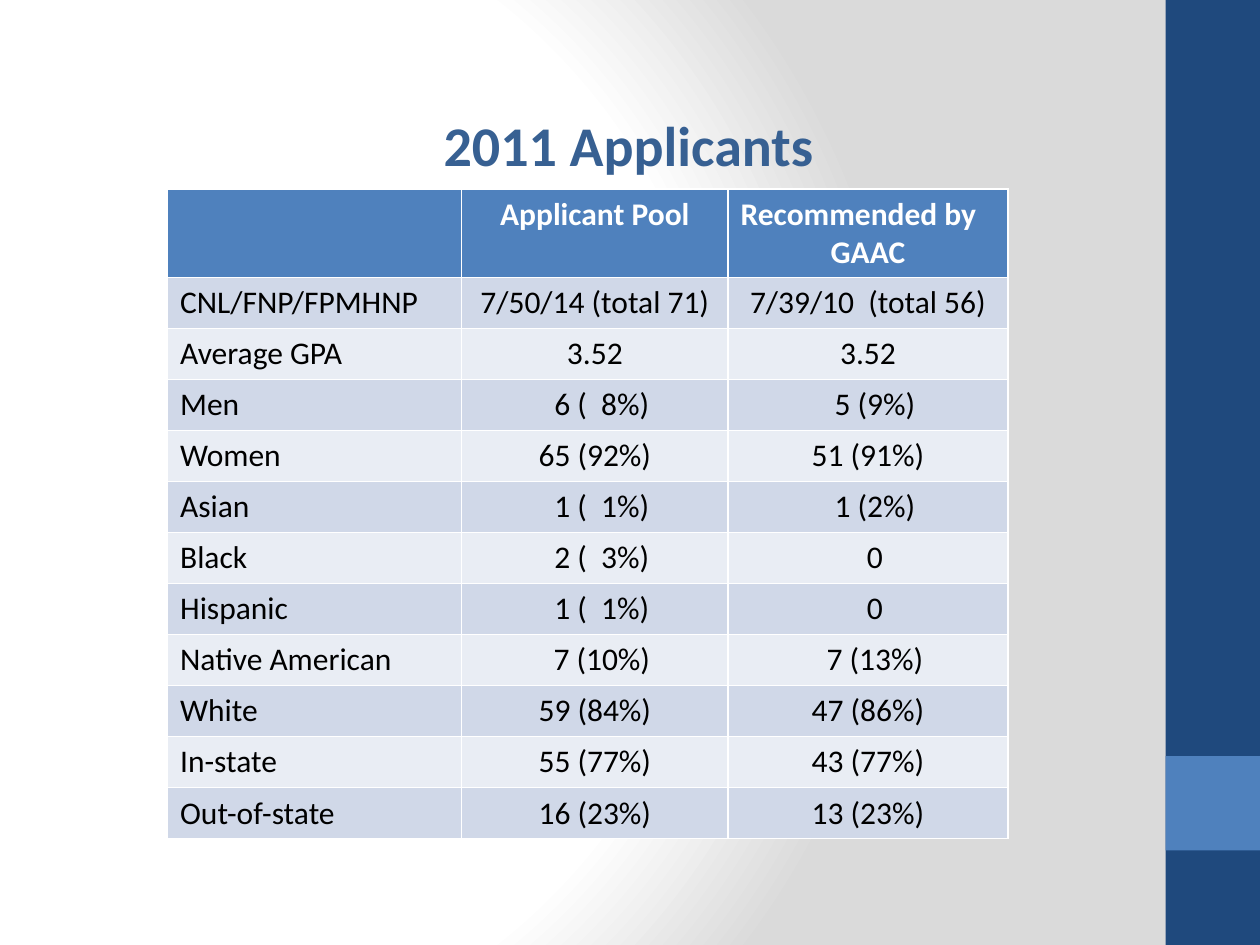
from dataclasses import dataclass

from pptx import Presentation
from pptx.dml.color import RGBColor
from pptx.enum.text import MSO_ANCHOR, MSO_AUTO_SIZE, PP_ALIGN
from pptx.oxml import parse_xml
from pptx.oxml.ns import nsdecls, qn
from pptx.util import Inches, Pt

LEFT, CENTER = PP_ALIGN.LEFT, PP_ALIGN.CENTER
TOP = MSO_ANCHOR.TOP
GROW = MSO_AUTO_SIZE.SHAPE_TO_FIT_TEXT
RECTANGLE = 1
TITLE_ONLY = 5


@dataclass(frozen=True)
class Theme:
    """Colours, font and type sizes of the slide."""
    font: str = "Calibri"
    title_size: int = 32
    table_size: int = 18
    title: str = "376092"
    navy: str = "1F497D"
    blue: str = "4F81BD"
    white: str = "FFFFFF"
    black: str = "000000"
    grey: str = "DADADA"
    bands: tuple = ("D0D8E8", "E9EDF4")


THEME = Theme()

HEADINGS = ["", "Applicant Pool", "Recommended by\nGAAC"]
APPLICANTS = [
    ["CNL/FNP/FPMHNP", "7/50/14 (total 71)", "7/39/10  (total 56)"],
    ["Average GPA", "3.52", "3.52"],
    ["Men", "6 (  8%)", "5 (9%)"],
    ["Women", "65 (92%)", "51 (91%)"],
    ["Asian", "1 (  1%)", "1 (2%)"],
    ["Black", "2 (  3%)", "0"],
    ["Hispanic", "1 (  1%)", "0"],
    ["Native American", "7 (10%)", "7 (13%)"],
    ["White", "59 (84%)", "47 (86%)"],
    ["In-state", "55 (77%)", "43 (77%)"],
    ["Out-of-state", "16 (23%)", "13 (23%)"],
]


def style_paragraph(paragraph, size, color, bold, align):
    """Set the type and alignment of one paragraph."""
    paragraph.alignment = align
    font = paragraph.font
    font.name, font.size, font.bold = THEME.font, Pt(size), bold
    font.color.rgb = RGBColor.from_string(color)


def paint_background(slide):
    """Fill the background with a circular gradient from white to grey."""
    slide.background.fill.gradient()
    stops = "".join(
        f'<a:gs pos="{percent * 1000}"><a:srgbClr val="{color}"/></a:gs>'
        for percent, color in ((0, THEME.white), (75, THEME.white), (100, THEME.grey)))
    gradient = parse_xml(
        f'<a:gradFill {nsdecls("a")} rotWithShape="1"><a:gsLst>{stops}</a:gsLst>'
        '<a:path path="circle">'
        '<a:fillToRect l="20000" t="50000" r="100000" b="50000"/>'
        '</a:path></a:gradFill>')
    linear = next(slide._element.iter(qn("a:gradFill")))
    linear.getparent().replace(linear, gradient)


def add_side_band(slide, left, top, width, height):
    """Draw the vertical band with its square accent."""
    accent_top = top + height - 2 * width
    for y, part_height, color in ((top, height, THEME.navy),
                                  (accent_top, width, THEME.blue)):
        part = slide.shapes.add_shape(RECTANGLE, left, y, width, part_height)
        part.shadow.inherit = False
        part.fill.solid()
        part.fill.fore_color.rgb = RGBColor.from_string(color)
        part.line.fill.background()


def place_title(slide, left, top, width, height):
    """Move and format the title placeholder."""
    title = slide.shapes.title
    title.left, title.top, title.width, title.height = left, top, width, height
    frame = title.text_frame
    frame.text = "2011 Applicants"
    frame.vertical_anchor = TOP
    frame.word_wrap = True
    frame.auto_size = GROW
    style_paragraph(frame.paragraphs[0], THEME.title_size, THEME.title, True, LEFT)


def fill_cell(cell, text, fill, color, bold, aligns):
    """Write one cell, with one alignment for each paragraph."""
    cell.fill.solid()
    cell.fill.fore_color.rgb = RGBColor.from_string(fill)
    cell.text = text
    for paragraph, align in zip(cell.text_frame.paragraphs, aligns):
        style_paragraph(paragraph, THEME.table_size, color, bold, align)


def add_applicant_table(slide, left, top, width, height):
    """Build the table of applicants with a header and banded rows."""
    header_height = Inches(0.7)
    row_height = (height - header_height) // len(APPLICANTS)
    table = slide.shapes.add_table(
        len(APPLICANTS) + 1, len(HEADINGS), left, top, width, height).table
    for column, share in zip(table.columns, (0.35, 0.317, 0.333)):
        column.width = int(width * share)
    table.rows[0].height = header_height
    for index, heading in enumerate(HEADINGS):
        aligns = (LEFT, CENTER) if "\n" in heading else (CENTER,)
        fill_cell(table.cell(0, index), heading, THEME.blue, THEME.white, True, aligns)
    for row, values in enumerate(APPLICANTS, start=1):
        table.rows[row].height = row_height
        band = THEME.bands[(row - 1) % 2]
        for index, value in enumerate(values):
            cell = table.cell(row, index)
            align = CENTER if index else LEFT
            fill_cell(cell, value, band, THEME.black, False, (align,))
            if len(value.split()[0]) == 1:
                cell.margin_left = Inches(0.21)


def main():
    """Build and save the slide."""
    presentation = Presentation()
    presentation.slide_width, presentation.slide_height = Inches(10), Inches(7.5)
    slide = presentation.slides.add_slide(presentation.slide_layouts[TITLE_ONLY])
    paint_background(slide)
    add_side_band(slide, Inches(9.25), 0, Inches(0.75), Inches(7.5))
    add_applicant_table(slide, Inches(1.33), Inches(1.5), Inches(6.67), Inches(5.16))
    place_title(slide, Inches(3.42), Inches(0.83), Inches(3.83), Inches(0.64))
    presentation.save("out.pptx")


if __name__ == "__main__":
    main()
